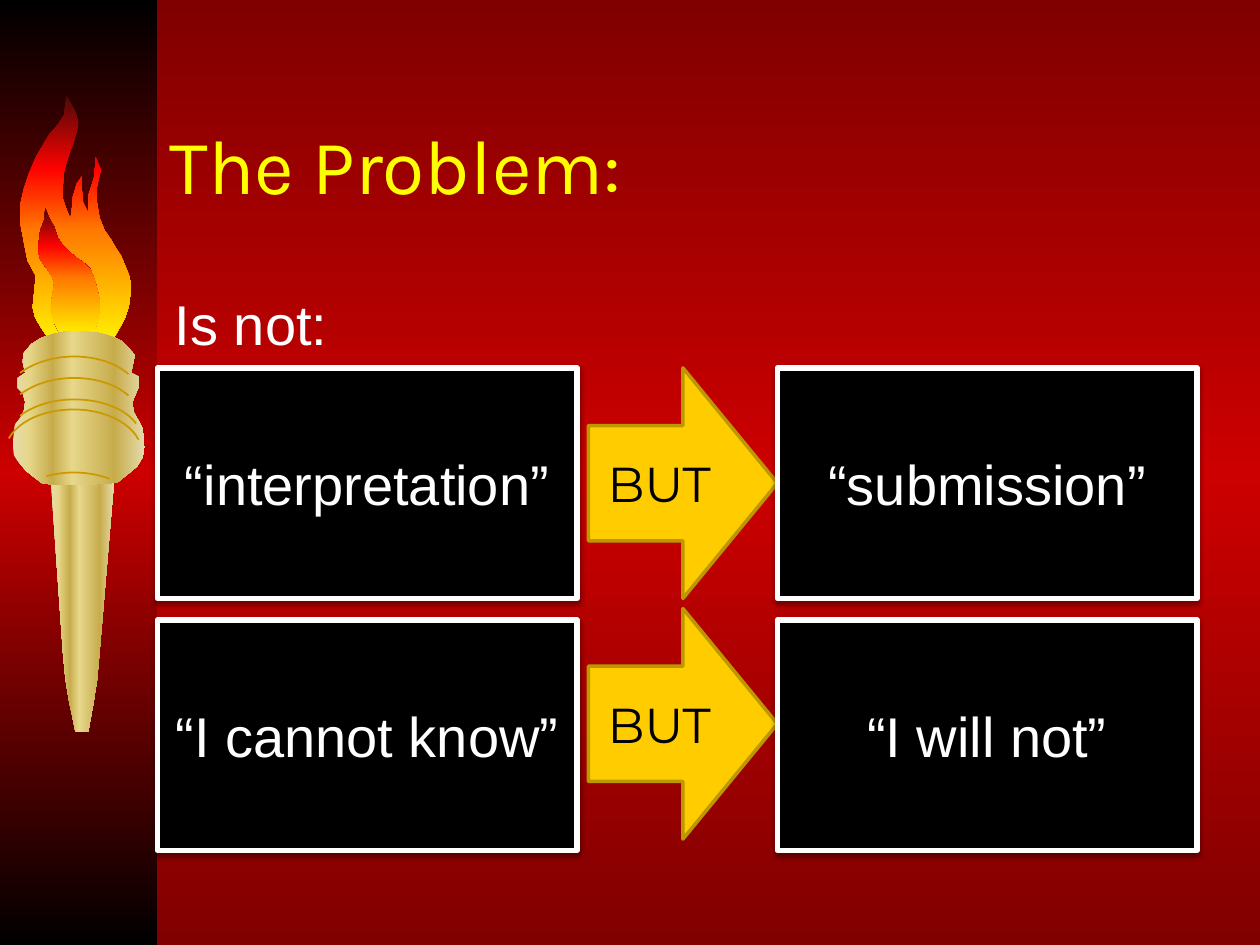
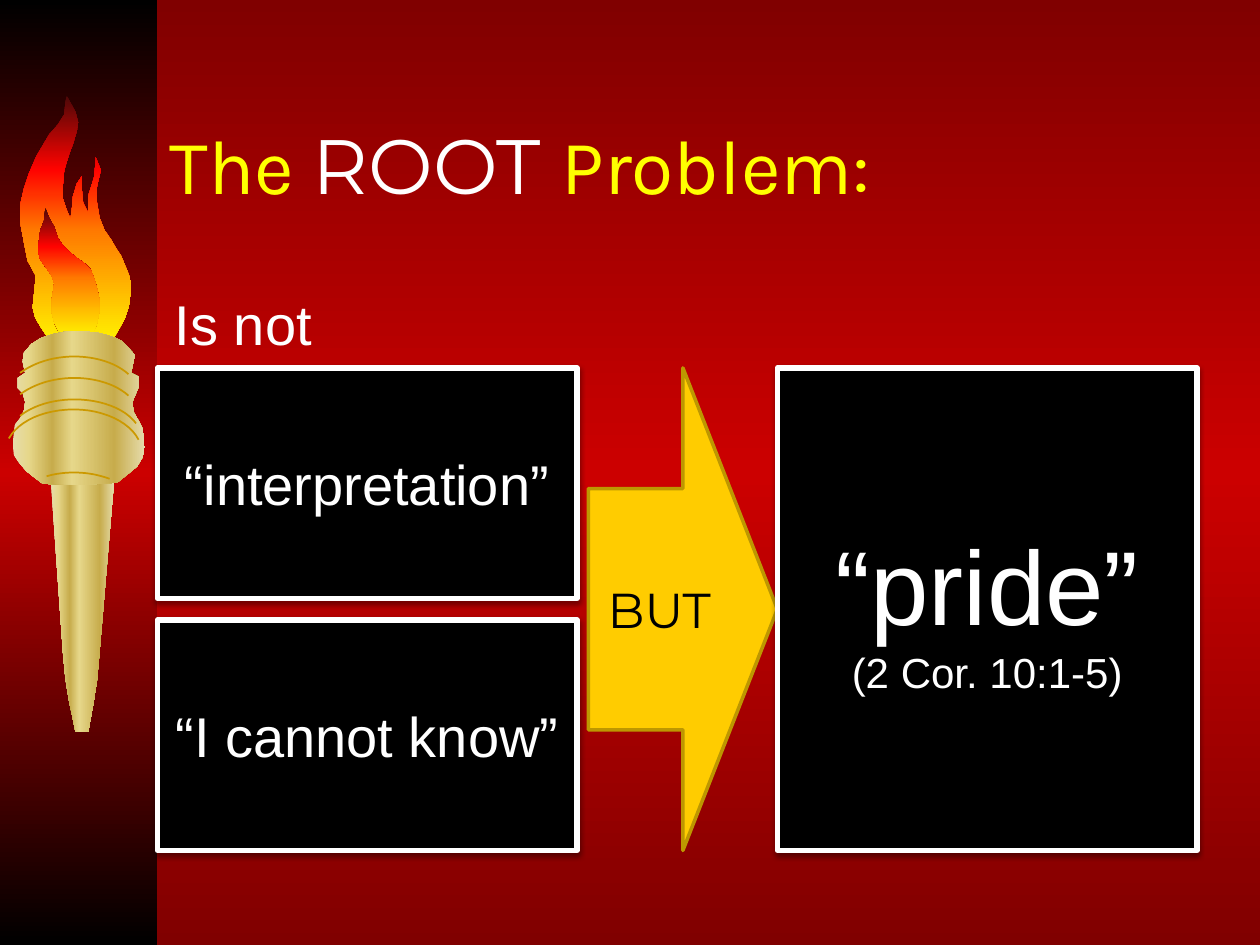
import lxml.etree
import pptx
import pptx.dml.color
import pptx.enum.shapes
import pptx.enum.text
import pptx.oxml.ns
import pptx.util

Inches, Pt = pptx.util.Inches, pptx.util.Pt
RGBColor = pptx.dml.color.RGBColor
SHAPE = pptx.enum.shapes.MSO_SHAPE
ALIGN = pptx.enum.text.PP_ALIGN
MIDDLE = pptx.enum.text.MSO_ANCHOR.MIDDLE
qn = pptx.oxml.ns.qn

BLACK = RGBColor(0x00, 0x00, 0x00)
WHITE = RGBColor(0xFF, 0xFF, 0xFF)
YELLOW = RGBColor(0xFF, 0xFF, 0x00)
GOLD = RGBColor(0xFF, 0xCC, 0x00)
DARK_GOLD = RGBColor(0xBD, 0x97, 0x00)
RING = RGBColor(0xCC, 0x99, 0x00)
RED = RGBColor(0xCC, 0x00, 0x00)
MAROON = RGBColor(0x80, 0x00, 0x00)
PALE_BRASS = RGBColor(0xE6, 0xDC, 0xAC)
BRASS = RGBColor(0xE6, 0xD7, 0x8A)
DEEP_BRASS = RGBColor(0xC7, 0xAC, 0x4C)

BACKGROUND = [(0, MAROON), (50, RED), (100, MAROON)]
BAND = [(0, BLACK), (50, RED), (100, BLACK)]
FIRE = [(0, RGBColor(0x4D, 0x08, 0x08)), (30, RGBColor(0xFF, 0x03, 0x00)),
        (55, RGBColor(0xFF, 0x7A, 0x00)), (100, RGBColor(0xFF, 0xF2, 0x00))]
METAL = [(0, PALE_BRASS), (12, BRASS), (30, DEEP_BRASS), (45, BRASS),
         (77, DEEP_BRASS), (100, PALE_BRASS)]

TITLE_FONT, ACCENT_FONT, BODY_FONT = "Karla", "Montserrat", "Arial"

# Content: a run is (text, size, font, colour); each run of a box is one line.
# Boxes are (column, row, rows spanned, lines); arrows are (top, height).
COLUMNS, ROWS = (1.25, 6.17), (2.92, 4.92)
BOX_W, BOX_H = 3.33, 1.83
TALL_H = ROWS[1] + BOX_H - ROWS[0]
ARROW_X, ARROW_W = 4.67, 1.5


def title_run(text):
    return text, 44, TITLE_FONT, YELLOW


def body_run(text, size=32):
    return text, size, BODY_FONT, WHITE


EXCUSES = [(0, 0, 1, [body_run("“interpretation”")]),
           (0, 1, 1, [body_run("“I cannot know”")])]
SLIDES = [
    {"title": [title_run("The Problem:")],
     "label": ("Is not:", 1.55),
     "arrows": [(2.92, BOX_H), (4.83, BOX_H)],
     "boxes": EXCUSES + [(1, 0, 1, [body_run("“submission”")]),
                         (1, 1, 1, [body_run("“I will not”")])]},
    {"title": [title_run("The "), ("ROOT ", 44, ACCENT_FONT, WHITE), title_run("Problem:")],
     "label": ("Is not", 1.42),
     "arrows": [(2.92, TALL_H)],
     "boxes": EXCUSES + [(1, 0, 2, [body_run("“pride”", 60),
                                    body_run("(2 Cor. 10:1-5)", 24)])]},
]

FLAME = [
    (0.88, 2.72), (0.94, 2.62), (0.99, 2.53), (1.02, 2.44), (1.04, 2.34), (1.04, 2.23),
    (1.01, 2.15), (0.96, 2.03), (0.92, 1.97), (0.88, 1.9), (0.83, 1.83), (0.79, 1.73),
    (0.77, 1.61), (0.77, 1.48), (0.8, 1.35), (0.76, 1.25), (0.75, 1.4), (0.7, 1.56),
    (0.7, 1.69), (0.66, 1.61), (0.65, 1.51), (0.65, 1.4), (0.61, 1.46), (0.58, 1.56),
    (0.57, 1.67), (0.56, 1.74), (0.53, 1.67), (0.5, 1.58), (0.5, 1.46), (0.51, 1.35),
    (0.55, 1.22), (0.58, 1.14), (0.61, 1.04), (0.62, 0.97), (0.6, 0.89), (0.53, 0.76),
    (0.52, 0.81), (0.51, 0.91), (0.46, 0.99), (0.39, 1.07), (0.29, 1.24), (0.23, 1.38),
    (0.19, 1.5), (0.16, 1.63), (0.16, 1.76), (0.19, 1.92), (0.22, 2.07), (0.28, 2.18),
    (0.28, 2.24), (0.27, 2.34), (0.26, 2.44), (0.28, 2.52), (0.32, 2.59), (0.36, 2.65),
    (0.41, 2.71), (0.56, 2.69), (0.72, 2.7)]
INNER_FLAME = [
    (0.36, 1.65), (0.35, 1.75), (0.32, 1.83), (0.31, 1.91), (0.3, 1.99), (0.32, 2.06),
    (0.37, 2.13), (0.41, 2.19), (0.43, 2.25), (0.42, 2.32), (0.41, 2.38), (0.41, 2.48),
    (0.43, 2.56), (0.46, 2.62), (0.52, 2.67), (0.72, 2.67), (0.75, 2.62), (0.77, 2.57),
    (0.79, 2.47), (0.79, 2.38), (0.77, 2.29), (0.75, 2.22), (0.72, 2.14), (0.67, 2.09),
    (0.6, 2.04), (0.55, 2), (0.5, 1.95), (0.46, 1.89), (0.43, 1.8), (0.39, 1.73)]
HANDLE = [
    (0.4, 3.76), (0.5, 5.18), (0.52, 5.39), (0.55, 5.57), (0.6, 5.81), (0.7, 5.81),
    (0.74, 5.59), (0.77, 5.4), (0.79, 5.18), (0.91, 3.76)]
CUP = [
    (0.19, 2.8), (0.18, 2.87), (0.2, 2.96), (0.14, 3), (0.14, 3.08), (0.18, 3.12),
    (0.2, 3.19), (0.19, 3.26), (0.16, 3.32), (0.12, 3.37), (0.11, 3.44), (0.1, 3.52),
    (0.11, 3.61), (0.15, 3.67), (0.21, 3.74), (0.34, 3.84), (0.65, 3.85), (0.93, 3.83),
    (1.03, 3.75), (1.09, 3.7), (1.13, 3.63), (1.15, 3.55), (1.13, 3.4), (1.1, 3.34),
    (1.06, 3.27), (1.05, 3.19), (1.08, 3.12), (1.1, 3.07), (1.1, 2.99), (1.04, 2.96),
    (1.07, 2.82), (1.02, 2.76), (0.97, 2.71), (0.91, 2.68), (0.85, 2.66), (0.77, 2.64),
    (0.65, 2.63), (0.53, 2.63), (0.43, 2.65), (0.33, 2.68), (0.25, 2.73)]
TORCH = [(FLAME, FIRE, 90), (INNER_FLAME, FIRE, 90), (HANDLE, METAL, 0), (CUP, METAL, 0)]

# Each ring is two cubic curves that meet at the fourth point.
UPPER_RING = [(0.16, 2.96), (0.27, 2.88), (0.42, 2.83), (0.59, 2.83),
              (0.76, 2.83), (0.92, 2.88), (1.02, 2.97)]
RINGS = [
    UPPER_RING,
    [(x, y + 0.17) for x, y in UPPER_RING],
    [(0.07, 3.48), (0.15, 3.34), (0.35, 3.25), (0.59, 3.25),
     (0.82, 3.25), (1.03, 3.35), (1.1, 3.49)],
    [(0.16, 3.3), (0.26, 3.22), (0.42, 3.17), (0.59, 3.17),
     (0.8, 3.17), (0.99, 3.24), (1.08, 3.36)],
    [(0.37, 3.78), (0.44, 3.76), (0.51, 3.75), (0.59, 3.75),
     (0.69, 3.75), (0.79, 3.77), (0.87, 3.8)],
]


def set_gradient(fill, element, stops, angle):
    """Fill with (percent, colour) stops; angle is clockwise degrees."""
    fill.gradient()
    fill.gradient_angle = -angle % 360
    gs_list = next(element.iter(qn("a:gsLst")))
    for gs in list(gs_list):
        gs_list.remove(gs)
    for percent, color in stops:
        gs = lxml.etree.SubElement(gs_list, qn("a:gs"), pos=str(percent * 1000))
        lxml.etree.SubElement(gs, qn("a:srgbClr"), val=str(color))


def add_soft_shadow(sp):
    effects = sp.element.spPr.find(qn("a:effectLst"))
    shadow = lxml.etree.SubElement(effects, qn("a:outerShdw"), blurRad=str(Pt(3.1)),
                                   dist=str(Pt(1.6)), dir="5400000", rotWithShape="0")
    color = lxml.etree.SubElement(shadow, qn("a:srgbClr"), val=str(BLACK))
    lxml.etree.SubElement(color, qn("a:alpha"), val="38000")


def add_outline(shapes, points, close):
    emu = [(Inches(x), Inches(y)) for x, y in points]
    builder = shapes.build_freeform(*emu[0])
    builder.add_line_segments(emu[1:], close=close)
    sp = builder.convert_to_shape()
    sp.shadow.inherit = False
    return sp


def curve_points(a, b, c, d, steps=12):
    """Points along a cubic curve from a to d."""
    for i in range(steps + 1):
        t = i / steps
        u = 1 - t
        yield tuple(u**3 * a[k] + 3 * u * u * t * b[k] + 3 * u * t * t * c[k] + t**3 * d[k]
                    for k in (0, 1))


def add_torch_band(s):
    shapes = s.shapes.add_group_shape().shapes
    band = shapes.add_shape(SHAPE.RECTANGLE, 0, 0, Inches(1.25), Inches(7.5))
    band.shadow.inherit = False
    band.line.fill.background()
    set_gradient(band.fill, band.element, BAND, 90)
    for points, stops, angle in TORCH:
        part = add_outline(shapes, points, True)
        part.line.fill.background()
        set_gradient(part.fill, part.element, stops, angle)
    for ring in RINGS:
        points = list(curve_points(*ring[:4])) + list(curve_points(*ring[3:]))[1:]
        arc = add_outline(shapes, points, False)
        arc.fill.background()
        arc.line.color.rgb = RING
        arc.line.width = Pt(1)


def write_runs(sp, runs, align=ALIGN.LEFT, one_per_line=False, wrap=True):
    tf = sp.text_frame
    tf.word_wrap = wrap
    p = tf.paragraphs[0]
    p.alignment = align
    for i, (text, size, font, color) in enumerate(runs):
        if i and one_per_line:
            p.add_line_break()
        r = p.add_run()
        r.text = text
        r.font.size, r.font.name, r.font.color.rgb = Pt(size), font, color
    return tf


def add_text(s, at, runs, wrap=True):
    sp = s.shapes.add_textbox(*map(Inches, at))
    return write_runs(sp, runs, wrap=wrap)


def add_panel(s, kind, at, runs, fill, line, width):
    sp = s.shapes.add_shape(kind, *map(Inches, at))
    sp.shadow.inherit = False
    sp.fill.solid()
    sp.fill.fore_color.rgb = fill
    sp.line.color.rgb = line
    sp.line.width = Pt(width)
    write_runs(sp, runs, ALIGN.CENTER, one_per_line=True).vertical_anchor = MIDDLE
    return sp


def build_slide(prs, content):
    s = prs.slides.add_slide(prs.slide_layouts[6])
    set_gradient(s.background.fill, s.element, BACKGROUND, 90)
    add_torch_band(s)
    add_text(s, (1.25, 0.67, 8.5, 1.25), content["title"]).vertical_anchor = MIDDLE
    for top, height in content["arrows"]:
        add_panel(s, SHAPE.RIGHT_ARROW, (ARROW_X, top, ARROW_W, height),
                  [("BUT", 28, ACCENT_FONT, BLACK)], GOLD, DARK_GOLD, 2)
    label, width = content["label"]
    add_text(s, (1.29, 2.25, width, 0.64), [body_run(label)], wrap=False)
    for column, row, span, lines in content["boxes"]:
        at = COLUMNS[column], ROWS[row], BOX_W, BOX_H if span == 1 else TALL_H
        box = add_panel(s, SHAPE.RECTANGLE, at, lines, BLACK, WHITE, 3)
        box.text_frame.paragraphs[0].space_before = Pt(0.2 * lines[0][1])
        add_soft_shadow(box)


def main():
    prs = pptx.Presentation()
    prs.slide_width, prs.slide_height = Inches(10), Inches(7.5)
    for content in SLIDES:
        build_slide(prs, content)
    prs.save("out.pptx")


if __name__ == "__main__":
    main()
